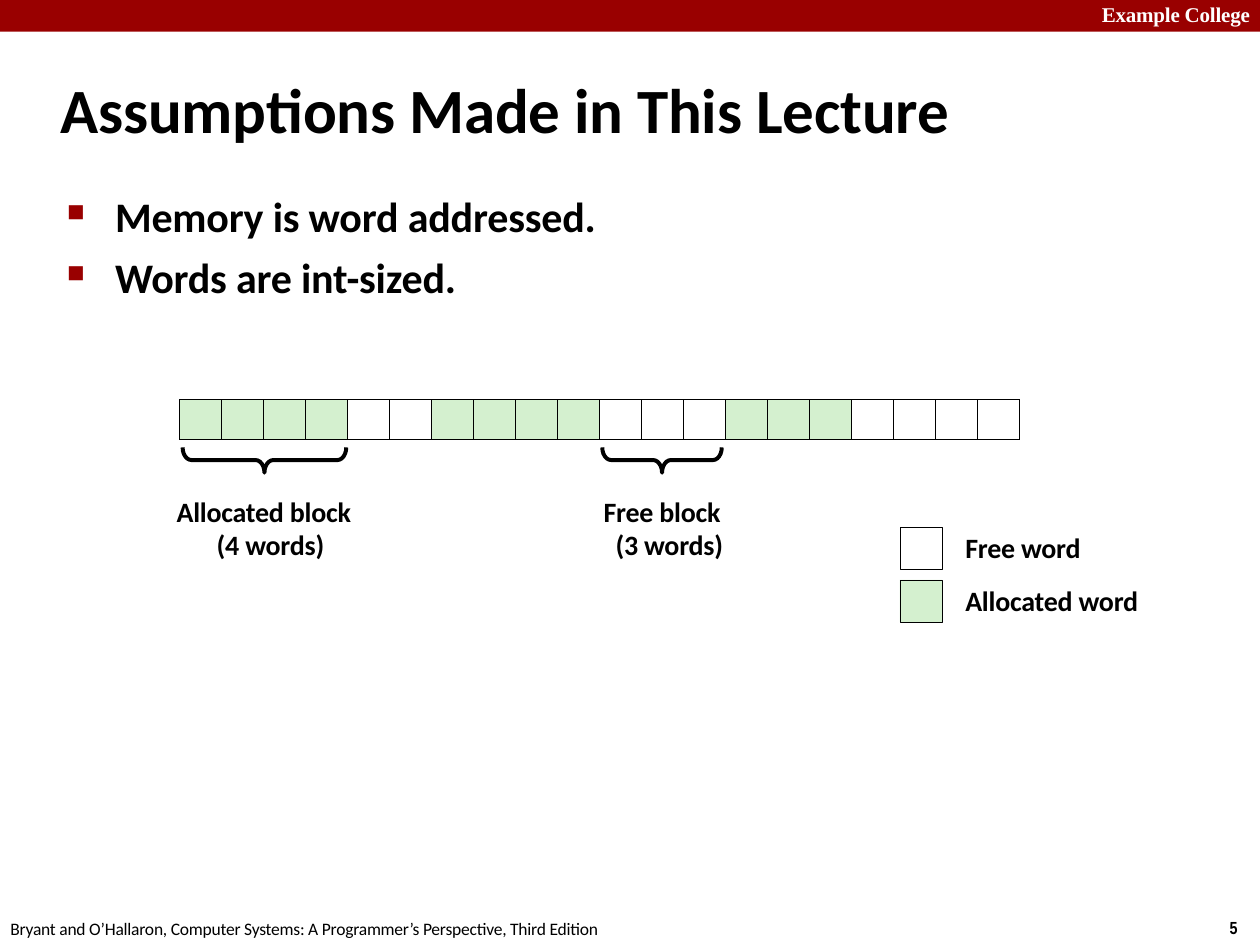
from lxml import etree
from pptx import Presentation, util as u
from pptx.dml.color import RGBColor
from pptx.enum import shapes, text
from pptx.oxml.ns import qn

C = {"red": "990000", "green": "D4F0CF", "black": "000000", "white": "FFFFFF"}
Cm, Pt = u.Cm, u.Pt


def rgb(name):
    return RGBColor.from_string(C[name])


def write(sp, box, lines, size, font="Calibri", color="black", bold=True,
          top=0.03, left=0, indent=0, **para):
    for k, v in zip(("left", "top", "width", "height"), box):
        setattr(sp, k, Cm(v))
    tf = sp.text_frame
    frame = {"margin_left": 0, "margin_right": 0, "margin_bottom": 0, "margin_top": Cm(top),
             "word_wrap": True, "auto_size": text.MSO_AUTO_SIZE.NONE,
             "vertical_anchor": text.MSO_ANCHOR.TOP}
    for k, v in frame.items():
        setattr(tf, k, v)
    for i, line in enumerate(lines):
        p = tf.paragraphs[0] if i == 0 else tf.add_paragraph()
        p.text = line
        for k, v in {"alignment": text.PP_ALIGN.LEFT, **para}.items():
            setattr(p, k, v)
        pPr = p._p.get_or_add_pPr()
        pPr.set("marL", str(Cm(left)))
        pPr.set("indent", str(Cm(indent)))
        for r in p.runs:
            for k, v in {"name": font, "size": Pt(size), "bold": bold}.items():
                setattr(r.font, k, v)
            r.font.color.rgb = rgb(color)
            r._r.get_or_add_rPr().set("spc", "-10")
    return tf


prs = Presentation()
prs.slide_width, prs.slide_height = Cm(25.4), Cm(19.05)
s = prs.slides.add_slide(prs.slide_layouts[5])

bar = s.shapes.add_shape(shapes.MSO_SHAPE.RECTANGLE, 0, 0, prs.slide_width, Cm(0.64))
bar.shadow.inherit = False
bar.fill.solid()
bar.fill.fore_color.rgb = rgb("red")
bar.line.fill.background()

write(s.shapes.title, (1.22, 1.4, 18.6, 1.6), ["Assumptions Made in This Lecture"], 36,
      space_before=Pt(1))

bullets = s.shapes.add_textbox(0, 0, 0, 0)
tf = write(bullets, (1.32, 3.61, 11.2, 2.51),
           ["Memory is word addressed.", "Words are int-sized."], 24,
           top=0.23, left=1, indent=-0.97, space_before=Pt(6))
for p in tf.paragraphs:
    pPr = p._p.get_or_add_pPr()
    clr = etree.SubElement(pPr, qn("a:buClr"))
    etree.SubElement(clr, qn("a:srgbClr"), val=C["red"])
    etree.SubElement(pPr, qn("a:buSzPct"), val="58000")
    etree.SubElement(pPr, qn("a:buChar"), char="■")

words = "AAAAFFAAAAFFFAAAFFFF"
tbl = s.shapes.add_table(1, len(words), Cm(3.62), Cm(8.05), Cm(16.92), Cm(0.81)).table
for i, word in enumerate(words):
    cell = tbl.cell(0, i)
    for side in ("left", "right", "top", "bottom"):
        setattr(cell, f"margin_{side}", 0)
    tcPr = cell._tc.get_or_add_tcPr()
    for side in ("lnL", "lnR", "lnT", "lnB"):
        ln = etree.SubElement(tcPr, qn(f"a:{side}"), w=str(Pt(0.25)))
        fill = etree.SubElement(ln, qn("a:solidFill"))
        etree.SubElement(fill, qn("a:srgbClr"), val=C["black"])
    cell.fill.solid()
    cell.fill.fore_color.rgb = rgb("green" if word == "A" else "white")

for x, w in ((3.68, 3.3), (12.14, 2.41)):
    h = 0.51
    brace = s.shapes.add_shape(shapes.MSO_SHAPE.RIGHT_BRACE, Cm(x + (w - h) / 2),
                               Cm(9.02 + (h - w) / 2), Cm(h), Cm(w))
    brace.rotation = 90
    brace.adjustments[0] = 0.35
    brace.shadow.inherit = False
    brace.fill.background()
    brace.line.color.rgb = rgb("black")
    brace.line.width = Pt(2.28)

for x, w, label, left in ((3.53, 4, "Allocated block\n(4 words)", 0.84),
                          (12.14, 2.8, "Free block\n(3 words)", 0.27)):
    write(s.shapes.add_textbox(0, 0, 0, 0), (x, 9.91, w, 1.4), [label], 16, top=0.08,
          left=left, indent=0.03 - left, space_before=Pt(2), line_spacing=Pt(18.7))

for y, label, color in ((10.62, "Free word", "white"), (11.69, "Allocated word", "green")):
    sp = s.shapes.add_shape(shapes.MSO_SHAPE.RECTANGLE, Cm(18.14), Cm(y), Cm(0.85), Cm(0.85))
    sp.shadow.inherit = False
    sp.fill.solid()
    sp.fill.fore_color.rgb = rgb(color)
    sp.line.color.rgb = rgb("black")
    sp.line.width = Pt(0.25)
    write(s.shapes.add_textbox(0, 0, 0, 0), (19.43, y + 0.05, 3.8, 0.74), [label], 16,
          left=0.03, space_before=Pt(0.9))

write(s.shapes.add_textbox(0, 0, 0, 0), (21.9, 0, 3.3, 0.58), ["Example College"], 12,
      font="Times New Roman", color="white", space_before=Pt(1),
      alignment=text.PP_ALIGN.RIGHT)
write(s.shapes.add_textbox(0, 0, 0, 0), (24.71, 18.49, 0.46, 0.48), ["5"], 10,
      font="Arial Narrow", top=0, left=0.08)
write(s.shapes.add_textbox(0, 0, 0, 0), (0.18, 18.57, 13, 0.43),
      ["Bryant and O’Hallaron, Computer Systems: A Programmer’s Perspective, Third Edition"],
      10, bold=False, top=0, left=0.03, line_spacing=Pt(10.4))

prs.save("out.pptx")
